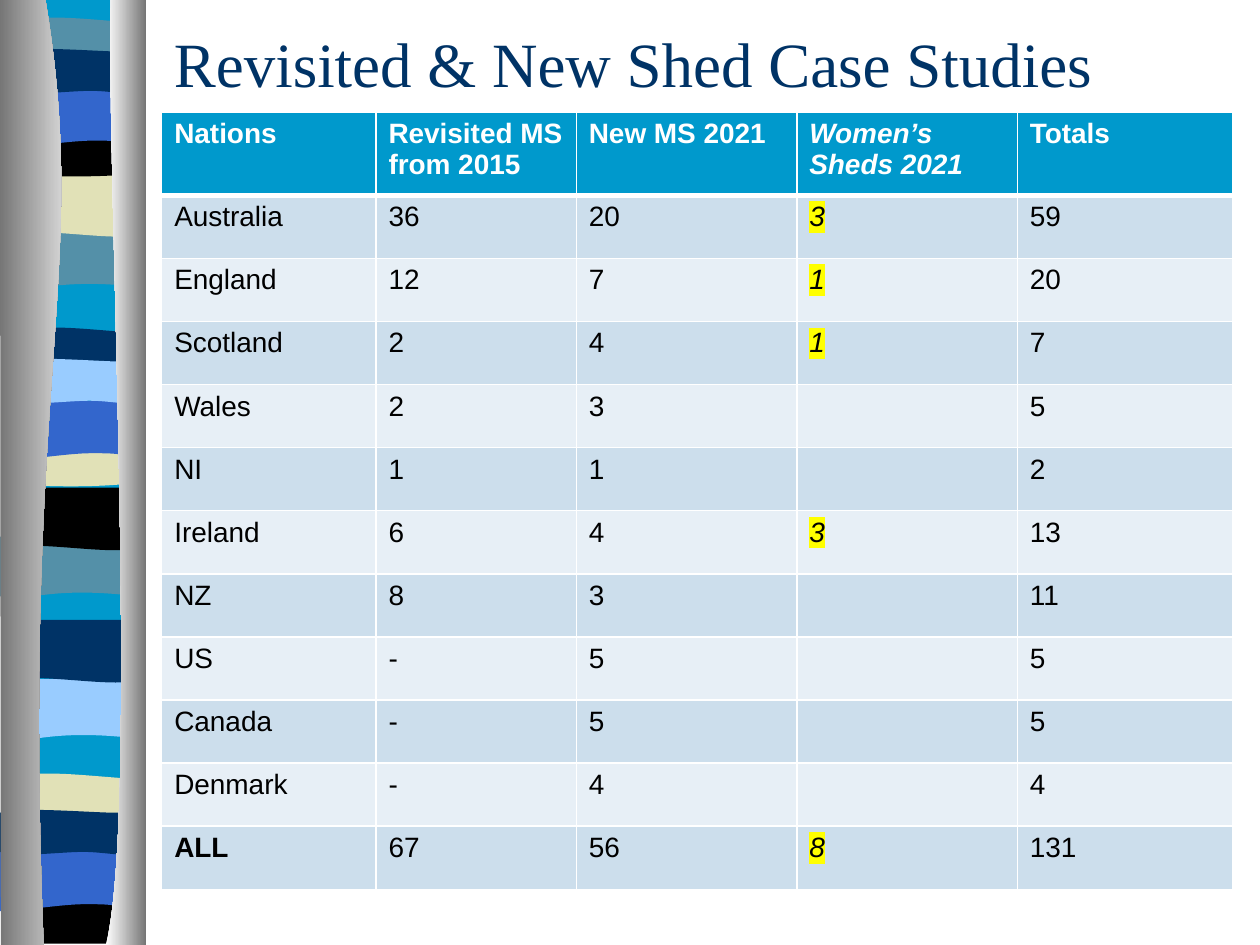
from dataclasses import dataclass

from lxml.etree import Element, SubElement
from pptx import Presentation
from pptx.dml.color import RGBColor
from pptx.enum.text import MSO_ANCHOR as Anchor
from pptx.enum.text import MSO_AUTO_SIZE as AutoSize
from pptx.enum.text import PP_ALIGN as Align
from pptx.oxml.ns import qn
from pptx.slide import Slide
from pptx.util import Pt

NAVY, TEAL, SLATE, SAND = "003366", "0099CC", "5490A8", "E1E1B7"
BLUE, SKY, BLACK, WHITE = "3366CC", "99CCFF", "000000", "FFFFFF"
GREY, YELLOW = "767676", "FFFF00"
ROW_FILLS = ("E7EFF6", "CCDEEC")

# Each outline is a list of points; six numbers make a Bezier curve.
SWOOP = [(78, 0), (78, 0, 78, 34, 78, 34), (24, 27.5, 13, 39, 0, 34), (0, 0), (78, 0)]
ROLL = [(78, 0), (78, 34), (65, 39.5, 24, 30.5, 0, 34), (0, 0), (78, 0)]
BARREL = [(78, 3), (78, 21), (65, 24, 13, 24, 0, 21), (0, 3),
          (5, 0, 16.5, 0, 29.5, 0), (42.5, 0, 68, 3, 78, 3)]
SAG = [(78, 0), (78, 24), (65, 27.5, 13, 27.5, 0, 24), (0, 0),
       (48, 3.6, 61, 0, 78, 0)]
CREST = [(78, 0), (78, 0, 78, 34, 78, 34), (66.5, 30, 61, 30, 48.5, 30),
         (35, 30, 12, 34, 0, 34), (0, 0), (78, 0)]
DRIFT = [(78, 3.6), (78, 26), (73, 29.5, 60.5, 26, 47.5, 26),
         (34.5, 26, 8, 29.5, 0, 26), (0, 3.6), (11, 0, 53, 3.6, 65.5, 3.6),
         (78.5, 3.6, 75.5, 3.6, 78, 3.6)]
FOOT = [(78, 0), (78, 26.6), (0, 26.6), (0, 0), (48, 3.6, 61, 0, 78, 0)]
RIBBON = [(78, 0), (78, 538.6), (0, 538.6), (0, 0), (78, 0)]
LEFT_CURTAIN = [(26, 0), (52, 155.5, 12, 213, 25, 540), (0.5, 540), (0, 0), (26, 0)]
RIGHT_CURTAIN = [(63.3, 0), (60.5, 90, 80, 465, 60.5, 540), (83.5, 540),
                 (83.5, 0), (63.3, 0)]

# Outline, left, top, colour; from back to front.
BANDS = [
    (RIBBON, 4.3, -2.9, TEAL),
    (SWOOP, 4.3, 130.3, SLATE), (ROLL, 4.3, 99.4, SAND), (BARREL, 4.3, 10.1, SLATE),
    (SAG, 4.3, 74.2, BLACK), (CREST, 4.3, 50.4, BLUE), (DRIFT, 4.3, 25.9, NAVY),
    (SWOOP, 0, 306.7, SLATE), (ROLL, 1.5, 278.6, BLACK), (BARREL, 3.6, 187.2, NAVY),
    (SAG, 1.5, 251.3, SAND), (CREST, 3.6, 229, BLUE), (DRIFT, 3.6, 203, SKY),
    (SWOOP, 0.7, 388.1, SKY), (ROLL, 2.2, 354.2, NAVY), (BARREL, 1.5, 442.1, SAND),
    (FOOT, 1.5, 512.6, BLACK), (CREST, 0, 486.7, BLUE), (DRIFT, 0, 460.8, NAVY),
]

WOMEN_COLUMN = 3
COLUMN_WIDTHS = (122.4, 114.5, 126, 126, 123.1)
HEADER_HEIGHT, ROW_HEIGHT = 47.5, 36.06
HEADER_BORDERS = {"a:lnL": 1, "a:lnR": 1, "a:lnT": 1, "a:lnB": 3}
ROWS = [
    ("Nations", "Revisited MS from 2015", "New MS 2021", "Women’s Sheds 2021", "Totals"),
    ("Australia", "36", "20", "3", "59"),
    ("England", "12", "7", "1", "20"),
    ("Scotland", "2", "4", "1", "7"),
    ("Wales", "2", "3", "", "5"),
    ("NI", "1", "1", "", "2"),
    ("Ireland", "6", "4", "3", "13"),
    ("NZ", "8", "3", "", "11"),
    ("US", "-", "5", "", "5"),
    ("Canada", "-", "5", "", "5"),
    ("Denmark", "-", "4", "", "4"),
    ("ALL", "67", "56", "8", "131"),
]


def color(hex_string):
    return RGBColor.from_string(hex_string)


def write(text_frame, text, *, size, font, fill, bold=False, italic=False, highlight=None):
    paragraph = text_frame.paragraphs[0]
    paragraph.alignment = Align.LEFT
    run = paragraph.add_run()
    run.text = text
    run.font.size = Pt(size)
    run.font.name = font
    run.font.bold = bold
    run.font.italic = italic
    run.font.color.rgb = color(fill)
    if highlight:
        properties = run.font._element
        mark = SubElement(properties, qn("a:highlight"))
        SubElement(mark, qn("a:srgbClr"), val=highlight)
        properties.find(qn("a:solidFill")).addnext(mark)


def bend(shape, outline):
    """Join each three straight steps that stand for a curve into one curve."""
    steps = iter(list(shape._element.iter(qn("a:lnTo"))))
    for segment in outline[1:]:
        step = next(steps)
        if len(segment) == 6:
            curve = Element(qn("a:cubicBezTo"))
            step.addprevious(curve)
            for part in (step, next(steps), next(steps)):
                curve.append(part[0])
                part.getparent().remove(part)


def add_borders(cell, widths):
    properties = cell._tc.get_or_add_tcPr()
    for index, (tag, width) in enumerate(widths.items()):
        line = Element(qn(tag), w=str(Pt(width)))
        SubElement(SubElement(line, qn("a:solidFill")), qn("a:srgbClr"), val=WHITE)
        properties.insert(index, line)


@dataclass
class Deck:
    slide: Slide
    title_font: str = "Times New Roman"
    body_font: str = "Arial"
    title_size: float = 36
    body_size: float = 16

    def title(self, text, left, top, width, height):
        shape = self.slide.shapes.title
        shape.left, shape.top = Pt(left), Pt(top)
        shape.width, shape.height = Pt(width), Pt(height)
        frame = shape.text_frame
        frame.auto_size = AutoSize.NONE
        frame.word_wrap = True
        frame.vertical_anchor = Anchor.MIDDLE
        write(frame, text, size=self.title_size, font=self.title_font, fill=NAVY)

    def outline(self, outline, left, top, *colors):
        """Draw a closed outline; two colours make a left-to-right gradient."""
        points = [(Pt(left + x), Pt(top + y)) for segment in outline
                  for x, y in zip(segment[::2], segment[1::2])]
        builder = self.slide.shapes.build_freeform(*points[0])
        builder.add_line_segments(points[1:], close=True)
        shape = builder.convert_to_shape()
        bend(shape, outline)
        shape.shadow.inherit = False
        shape.line.fill.background()
        if len(colors) == 1:
            shape.fill.solid()
            shape.fill.fore_color.rgb = color(colors[0])
        else:
            shape.fill.gradient()
            shape.fill.gradient_angle = 0
            for stop, stop_color in zip(shape.fill.gradient_stops, colors):
                stop.color.rgb = color(stop_color)

    def table(self, rows, left, top):
        height = HEADER_HEIGHT + ROW_HEIGHT * (len(rows) - 1)
        table = self.slide.shapes.add_table(
            len(rows), len(COLUMN_WIDTHS), Pt(left), Pt(top),
            Pt(sum(COLUMN_WIDTHS)), Pt(height)).table
        for column, width in zip(table.columns, COLUMN_WIDTHS):
            column.width = Pt(width)
        for row_index, values in enumerate(rows):
            header = row_index == 0
            table.rows[row_index].height = Pt(HEADER_HEIGHT if header else ROW_HEIGHT)
            for column_index, value in enumerate(values):
                cell = table.cell(row_index, column_index)
                cell.fill.solid()
                cell.fill.fore_color.rgb = color(TEAL if header else ROW_FILLS[row_index % 2])
                if header:
                    add_borders(cell, HEADER_BORDERS)
                women = column_index == WOMEN_COLUMN
                if value:
                    write(cell.text_frame, value, size=self.body_size, font=self.body_font,
                          fill=WHITE if header else BLACK,
                          bold=header or value == "ALL", italic=women,
                          highlight=YELLOW if women and not header else None)


def main():
    presentation = Presentation()
    presentation.slide_width, presentation.slide_height = Pt(720), Pt(540)
    deck = Deck(presentation.slides.add_slide(presentation.slide_layouts[5]))
    for band in BANDS:
        deck.outline(*band)
    deck.outline(LEFT_CURTAIN, 0, 0, GREY, WHITE)
    deck.outline(RIGHT_CURTAIN, 0, 0, WHITE, GREY)
    deck.title("Revisited & New Shed Case Studies", 92.2, 7.2, 567.4, 56.9)
    deck.table(ROWS, 92.4, 64.1)
    presentation.save("out.pptx")


if __name__ == "__main__":
    main()
